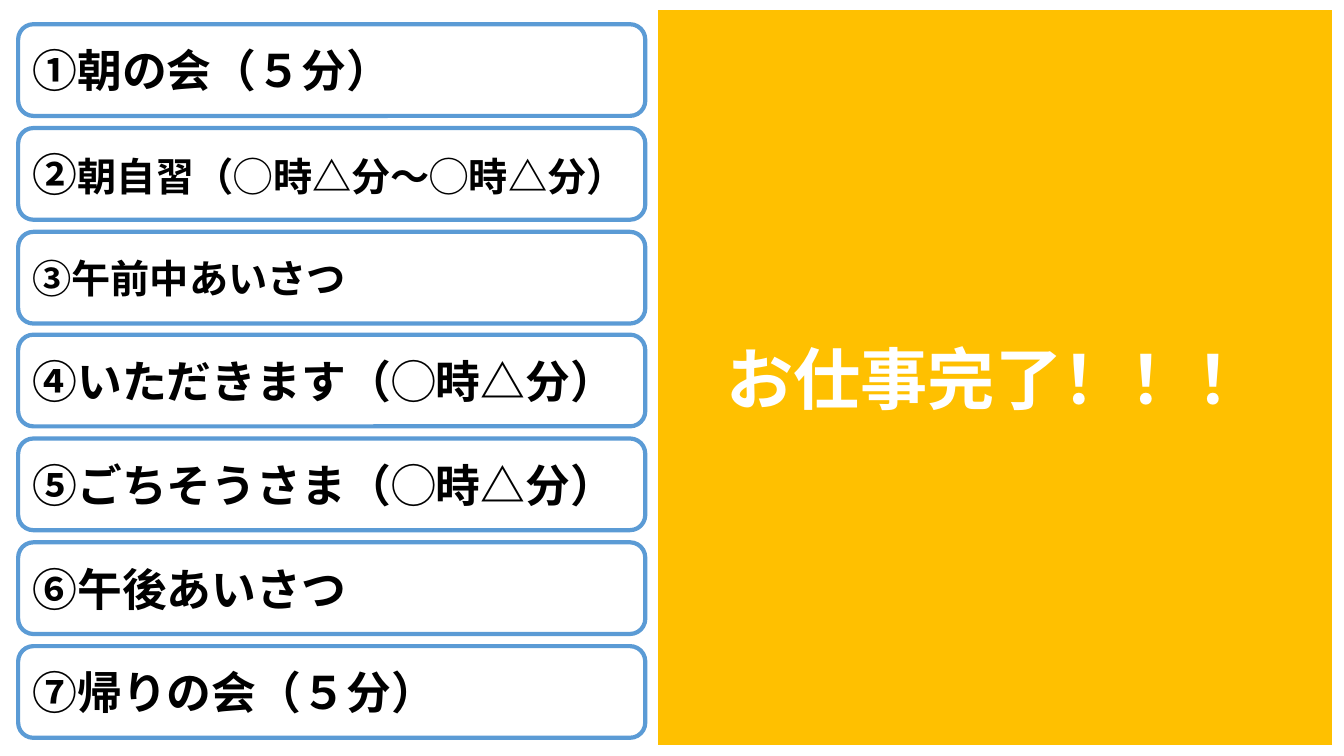
from lxml.etree import SubElement
from pptx import Presentation
from pptx.dml.color import RGBColor as Rgb
from pptx.enum.shapes import MSO_SHAPE as Shape
from pptx.enum.text import MSO_ANCHOR as Anchor, PP_ALIGN as Align
from pptx.oxml.ns import qn
from pptx.util import Emu, Pt

EMU_PER_PX = 9144  # 100 px to the inch
COLORS = {"white": "FFFFFF", "black": "000000", "blue": "5B9BD5", "amber": "FFC000"}


class Board:
    font = "Noto Sans CJK JP"

    def __init__(self, deck):
        self.page = deck.slides.add_slide(deck.slide_layouts[6])

    def panel(self, kind, frame, fill, line, width):
        box = self.page.shapes.add_shape(kind, *(Emu(px * EMU_PER_PX) for px in frame))
        box.shadow.inherit = False
        box.fill.solid()
        box.fill.fore_color.rgb = Rgb.from_string(COLORS[fill])
        box.line.color.rgb = Rgb.from_string(COLORS[line])
        box.line.width = Pt(width)
        return box

    def text(self, box, spans, color, align):
        box.text_frame.word_wrap = True
        box.text_frame.vertical_anchor = Anchor.MIDDLE
        para = box.text_frame.paragraphs[0]
        para.alignment = align
        for words, size in spans:
            span = para.add_run()
            span.text = words
            span.font.size = Pt(size)
            span.font.bold = True
            span.font.name = self.font
            span.font.color.rgb = Rgb.from_string(COLORS[color])
            # Japanese glyphs take the East Asian typeface
            SubElement(span.font._element, qn("a:ea"), typeface=self.font)

    def task(self, top, spans):
        box = self.panel(Shape.ROUNDED_RECTANGLE, (18, top, 622, 91), "white", "blue", 3)
        self.text(box, spans, "black", Align.LEFT)

    def banner(self, frame, words, size):
        box = self.panel(Shape.RECTANGLE, frame, "amber", "white", 1.5)
        self.text(box, [(words, size)], "white", Align.CENTER)


TASKS = [
    [("①朝の会（５分）", 32)],
    [("②", 32), ("朝自習（◯時△分〜◯時△分）", 28)],
    [("③午前中あいさつ", 28)],
    [("④いただきます（◯時△分）", 32)],
    [("⑤ごちそうさま（◯時△分）", 32)],
    [("⑥午後あいさつ", 32)],
    [("⑦帰りの会（５分）", 32)],
]
FIRST_TOP, LAST_TOP = 24, 641


def main():
    deck = Presentation()
    deck.slide_width = Emu(1333 * EMU_PER_PX)
    deck.slide_height = Emu(750 * EMU_PER_PX)
    board = Board(deck)

    # Daily tasks, evenly spaced down the left
    pitch = (LAST_TOP - FIRST_TOP) / (len(TASKS) - 1)
    for index, spans in enumerate(TASKS):
        board.task(round(FIRST_TOP + index * pitch), spans)

    # Completion message on the right
    board.banner((652, 9, 670, 731), "お仕事完了！！！", 48)

    deck.save("out.pptx")


if __name__ == "__main__":
    main()
